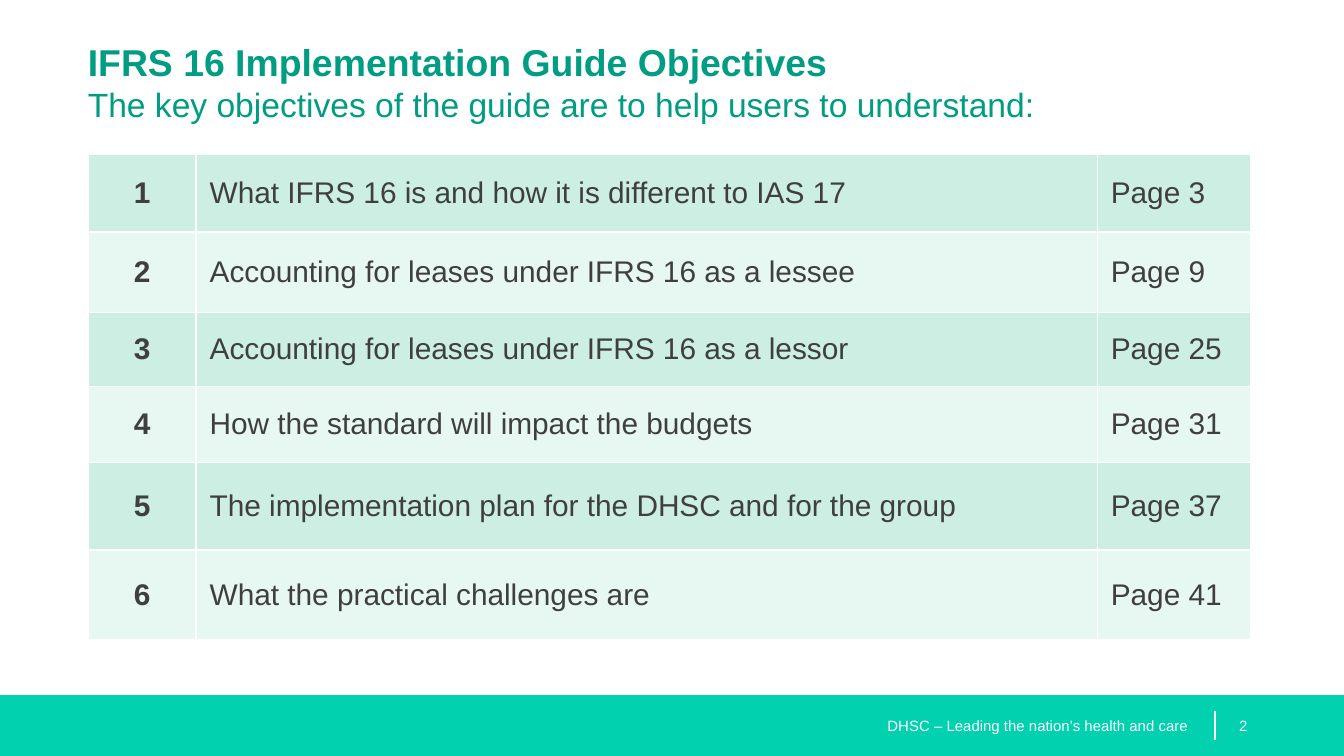
from dataclasses import dataclass

from lxml import etree
from pptx import Presentation
from pptx.dml.color import RGBColor
from pptx.enum.shapes import MSO_CONNECTOR, MSO_SHAPE
from pptx.enum.text import MSO_ANCHOR, MSO_AUTO_SIZE, PP_ALIGN
from pptx.oxml.ns import qn
from pptx.util import Cm, Pt

LEFT, CENTER, RIGHT = PP_ALIGN.LEFT, PP_ALIGN.CENTER, PP_ALIGN.RIGHT
TOP, MIDDLE = MSO_ANCHOR.TOP, MSO_ANCHOR.MIDDLE
NO_AUTOFIT = MSO_AUTO_SIZE.NONE
RECTANGLE, STRAIGHT = MSO_SHAPE.RECTANGLE, MSO_CONNECTOR.STRAIGHT
TITLE_ONLY = 5


@dataclass(frozen=True)
class Theme:
    font: str = "Arial"
    title: str = "019D82"
    text: str = "3F3F3F"
    white: str = "FFFFFF"
    band: str = "01D1AE"
    rows: tuple = ("CCEEE3", "E7F7F2")
    title_size: int = 20
    subtitle_size: int = 18
    table_size: int = 16
    footer_size: int = 8
    border_width: float = 1
    divider_width: float = 0.75


THEME = Theme()

OBJECTIVES = [
    ("What IFRS 16 is and how it is different to IAS 17", 3, Cm(1.47)),
    ("Accounting for leases under IFRS 16 as a lessee", 9, Cm(1.52)),
    ("Accounting for leases under IFRS 16 as a lessor", 25, Cm(1.4)),
    ("How the standard will impact the budgets", 31, Cm(1.43)),
    ("The implementation plan for the DHSC and for the group", 37, Cm(1.66)),
    ("What the practical challenges are", 41, Cm(1.7)),
]


def format_run(run, size, color, bold=False):
    run.font.name = THEME.font
    run.font.size = Pt(size)
    run.font.bold = bold
    run.font.color.rgb = RGBColor.from_string(color)


def clear_frame(text_frame, anchor):
    """Remove insets and autofit, and wrap the text."""
    text_frame.margin_left = text_frame.margin_right = 0
    text_frame.margin_top = text_frame.margin_bottom = 0
    text_frame.word_wrap = True
    text_frame.auto_size = NO_AUTOFIT
    text_frame.vertical_anchor = anchor


def add_title(slide, left, top, width, height):
    title = slide.shapes.title
    title.left, title.top, title.width, title.height = left, top, width, height
    text_frame = title.text_frame
    clear_frame(text_frame, TOP)
    text_frame.text = ("IFRS 16 Implementation Guide Objectives\v"
                       "The key objectives of the guide are to help users to understand:")
    paragraph = text_frame.paragraphs[0]
    paragraph.alignment = LEFT
    heading, subtitle = paragraph.runs
    format_run(heading, THEME.title_size, THEME.title, bold=True)
    format_run(subtitle, THEME.subtitle_size, THEME.title)


def set_borders(cell):
    properties = cell._tc.get_or_add_tcPr()
    for position, side in enumerate(("a:lnL", "a:lnR", "a:lnT", "a:lnB")):
        line = etree.Element(qn(side), w=str(Pt(THEME.border_width)))
        fill = etree.SubElement(line, qn("a:solidFill"))
        etree.SubElement(fill, qn("a:srgbClr"), val=THEME.white)
        properties.insert(position, line)


def add_objectives_table(slide, left, top, width):
    height = sum(row_height for _, _, row_height in OBJECTIVES)
    table = slide.shapes.add_table(len(OBJECTIVES), 3, left, top, width, height).table
    number_width, page_width = Cm(2.05), Cm(2.9)
    column_widths = (number_width, width - number_width - page_width, page_width)
    for column, column_width in zip(table.columns, column_widths):
        column.width = column_width
    for index, (objective, page, row_height) in enumerate(OBJECTIVES):
        table.rows[index].height = row_height
        values = (str(index + 1), objective, f"Page {page}")
        for column_index, value in enumerate(values):
            is_number = column_index == 0
            cell = table.cell(index, column_index)
            cell.fill.solid()
            cell.fill.fore_color.rgb = RGBColor.from_string(THEME.rows[index % 2])
            cell.vertical_anchor = MIDDLE
            set_borders(cell)
            cell.text_frame.text = value
            paragraph = cell.text_frame.paragraphs[0]
            paragraph.alignment = CENTER if is_number else LEFT
            format_run(paragraph.runs[0], THEME.table_size, THEME.text, bold=is_number)


def add_footer_text(slide, text, alignment, left, top, width, height):
    text_frame = slide.shapes.add_textbox(left, top, width, height).text_frame
    clear_frame(text_frame, MIDDLE)
    text_frame.text = text
    paragraph = text_frame.paragraphs[0]
    paragraph.alignment = alignment
    format_run(paragraph.runs[0], THEME.footer_size, THEME.white)


def add_footer(slide, left, top, width, height):
    band = slide.shapes.add_shape(RECTANGLE, left, top, width, height)
    band.shadow.inherit = False
    band.fill.solid()
    band.fill.fore_color.rgb = RGBColor.from_string(THEME.band)
    band.line.fill.background()

    divider_left = left + width - Cm(2.44)
    divider = slide.shapes.add_connector(
        STRAIGHT, divider_left, top + Cm(0.3), divider_left, top + height - Cm(0.3))
    divider.line.color.rgb = RGBColor.from_string(THEME.white)
    divider.line.width = Pt(THEME.divider_width)
    etree.SubElement(divider._element.spPr, qn("a:effectLst"))

    slogan_width = Cm(10.16)
    add_footer_text(slide, "DHSC – Leading the nation’s health and care", RIGHT,
                    divider_left - Cm(0.5) - slogan_width, top, slogan_width, height)
    add_footer_text(slide, "2", LEFT, divider_left + Cm(0.46), top, Cm(1.4), height)


def main():
    presentation = Presentation()
    presentation.slide_width, presentation.slide_height = Cm(25.4), Cm(14.29)
    slide = presentation.slides.add_slide(presentation.slide_layouts[TITLE_ONLY])

    margin, content_width, footer_height = Cm(1.66), Cm(21.98), Cm(1.15)
    add_footer(slide, 0, presentation.slide_height - footer_height,
               presentation.slide_width, footer_height)
    add_title(slide, margin, Cm(0.74), content_width, Cm(1.83))
    add_objectives_table(slide, margin, Cm(2.92), content_width)
    presentation.save("out.pptx")


if __name__ == "__main__":
    main()
